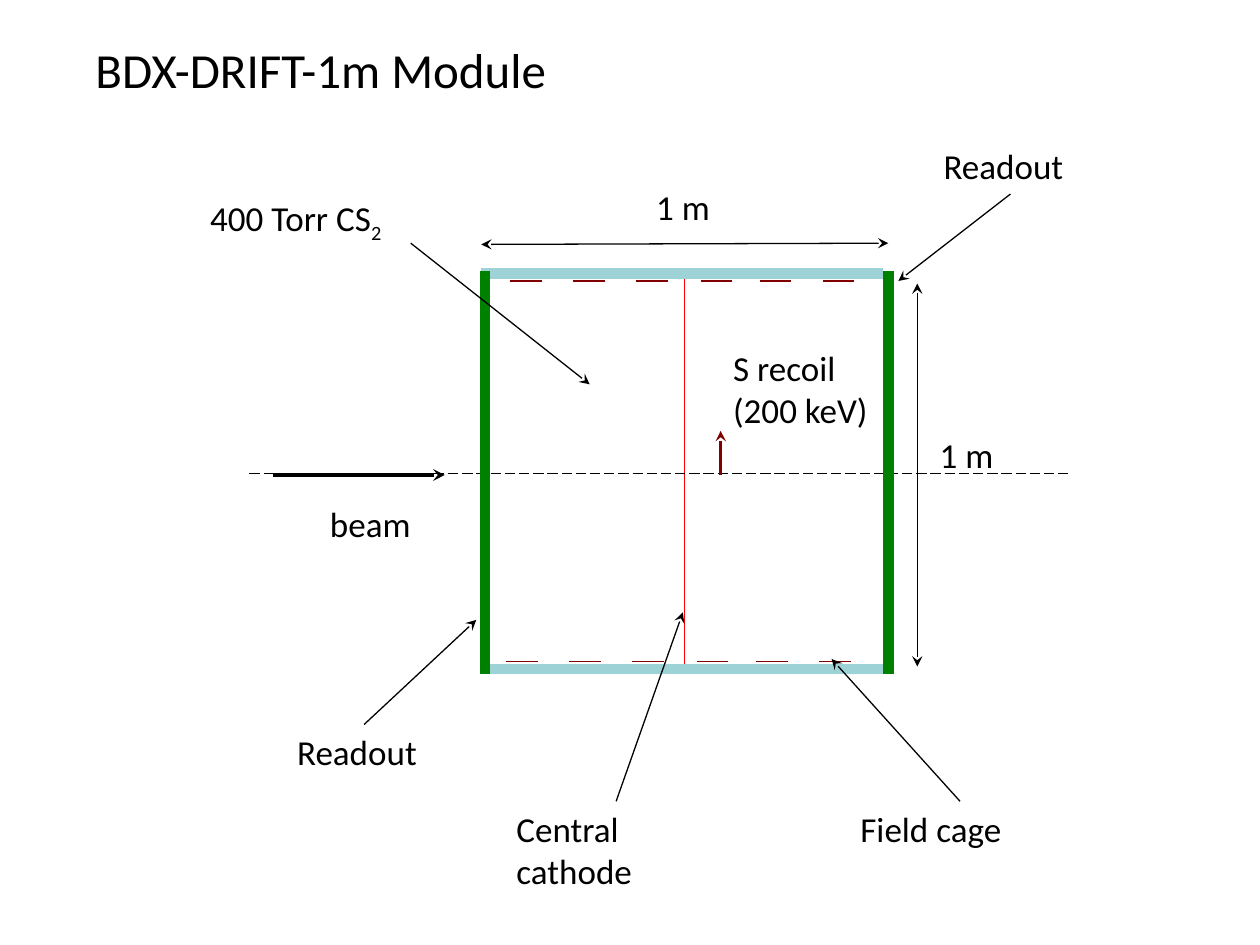
import pptx
import pptx.dml.color
import pptx.enum.dml
import pptx.enum.shapes
import pptx.enum.text
import pptx.oxml
import pptx.oxml.ns
import pptx.util

Inches = pptx.util.Inches
Pt = pptx.util.Pt
Text = pptx.enum.text
DASH = pptx.enum.dml.MSO_LINE.LONG_DASH
BLACK, RED, MAROON = "000000", "FF0000", "800000"
GREEN, TEAL = "008000", "9DD2D6"


def color(code):
    return pptx.dml.color.RGBColor.from_string(code)


def node(tag, **attrs):
    """Make an empty DrawingML element."""
    item = pptx.oxml.parse_xml(f"<{tag} {pptx.oxml.ns.nsdecls('a')}/>")
    for key, value in attrs.items():
        item.set(key, value)
    return item


def apply(target, values):
    for key, value in values.items():
        setattr(target, key, value)


class Sheet:
    font = "Calibri"
    frame = {
        "word_wrap": True,
        "margin_left": Inches(0.1), "margin_right": Inches(0.1),
        "margin_top": Inches(0.05), "margin_bottom": Inches(0.05),
    }

    def __init__(self, slide):
        self.slide = slide

    def fill(self, run, text, size):
        """Put styled text in a run."""
        run.text = text
        apply(run.font, {"name": self.font, "size": Pt(size)})
        run.font.color.rgb = color(BLACK)

    def title(self, text, left, top, width, height):
        shape = self.slide.shapes.title
        apply(shape, {"left": Inches(left), "top": Inches(top),
                      "width": Inches(width), "height": Inches(height)})
        frame = shape.text_frame
        apply(frame, {**self.frame, "vertical_anchor": Text.MSO_ANCHOR.MIDDLE})
        para = frame.paragraphs[0]
        para.alignment = Text.PP_ALIGN.CENTER
        self.fill(para.add_run(), text, 28)

    def label(self, text, left, top, width, height=0.44, sub=None):
        """Add a text box; each line is a paragraph, sub is a subscript."""
        box = self.slide.shapes.add_textbox(
            Inches(left), Inches(top), Inches(width), Inches(height))
        frame = box.text_frame
        apply(frame, {**self.frame,
                      "auto_size": Text.MSO_AUTO_SIZE.SHAPE_TO_FIT_TEXT})
        for num, part in enumerate(text.split("\n")):
            para = frame.add_paragraph() if num else frame.paragraphs[0]
            self.fill(para.add_run(), part, 20)
        if sub:
            run = para.add_run()
            self.fill(run, sub, 20)
            run.font._element.set("baseline", "-25000")

    def line(self, x1, y1, x2, y2, code=BLACK, width=0.75, dash=None, ends=()):
        """Add a line; ends names the arrowheads: headEnd, tailEnd."""
        link = self.slide.shapes.add_connector(
            pptx.enum.shapes.MSO_CONNECTOR.STRAIGHT,
            Inches(x1), Inches(y1), Inches(x2), Inches(y2))
        link.line.color.rgb = color(code)
        apply(link.line, {"width": Pt(width), "dash_style": dash})
        for end in ends:
            link.line._get_or_add_ln().append(node(f"a:{end}", type="stealth"))
        link._element.spPr.append(node("a:effectLst"))

    def arrow(self, *ends, **look):
        self.line(*ends, ends=("tailEnd",), **look)

    def span(self, *ends):
        """Add a dimension line with a head at both ends."""
        self.line(*ends, ends=("headEnd", "tailEnd"))


def main():
    deck = pptx.Presentation()
    apply(deck, {"slide_width": Inches(10), "slide_height": Inches(7.5)})
    sheet = Sheet(deck.slides.add_slide(deck.slide_layouts[5]))
    sheet.title("BDX-DRIFT-1m Module", 0.31, 0.26, 4.47, 0.58)

    # Cathode, beam axis and vessel walls
    left, right, top, base = 3.85, 7.05, 2.15, 5.35
    sheet.line(5.43, 2.18, 5.43, base, code=RED)
    sheet.line(1.98, 3.76, 8.5, 3.76, dash=DASH)
    for y in (2.17, 5.31):
        sheet.line(3.82, y, 7.01, y, code=TEAL, width=6)
    for x in (left, right):
        sheet.line(x, top, x, base, code=GREEN, width=6)

    # Field cage strips
    for start, y in ((4.02, 5.25), (4.05, 2.23)):
        for step in (0, 0.5, 1, 1.51, 1.98, 2.48):
            x = start + step
            sheet.line(x, y, x + 0.25, y, code=MAROON)

    # Dimensions
    sheet.span(3.82, 1.94, right, 1.93)
    sheet.span(7.28, 5.29, 7.28, 2.25)

    # Beam and recoil
    sheet.arrow(2.17, 3.77, 3.53, 3.77, width=2.25)
    sheet.arrow(5.72, 3.77, 5.72, 3.42, code=MAROON, width=2)

    # Pointers from labels to parts
    for ends in (
        (3.26, 1.93, 4.68, 3.05),
        (4.89, 6.36, 5.42, 4.86),
        (2.89, 5.75, 3.78, 4.92),
        (7.62, 6.36, 6.6, 5.23),
        (8.02, 1.54, 7.13, 2.23),
    ):
        sheet.arrow(*ends)

    for label in (
        ("1 m", 5.11, 1.42, 0.64),
        ("beam", 2.52, 3.94, 1.15),
        ("400 Torr CS", 1.57, 1.51, 1.9, 0.44, "2"),
        ("Central cathode", 4, 6.36, 1.78, 0.77),
        ("Readout", 2.26, 5.75, 1.26),
        ("1 m", 7.36, 3.39, 0.76),
        ("Field cage", 6.73, 6.36, 1.78),
        ("Readout", 7.39, 1.1, 1.26),
        ("S recoil\n(200 keV)", 5.72, 2.7, 1.29, 0.77),
    ):
        sheet.label(*label)

    deck.save("out.pptx")


if __name__ == "__main__":
    main()
